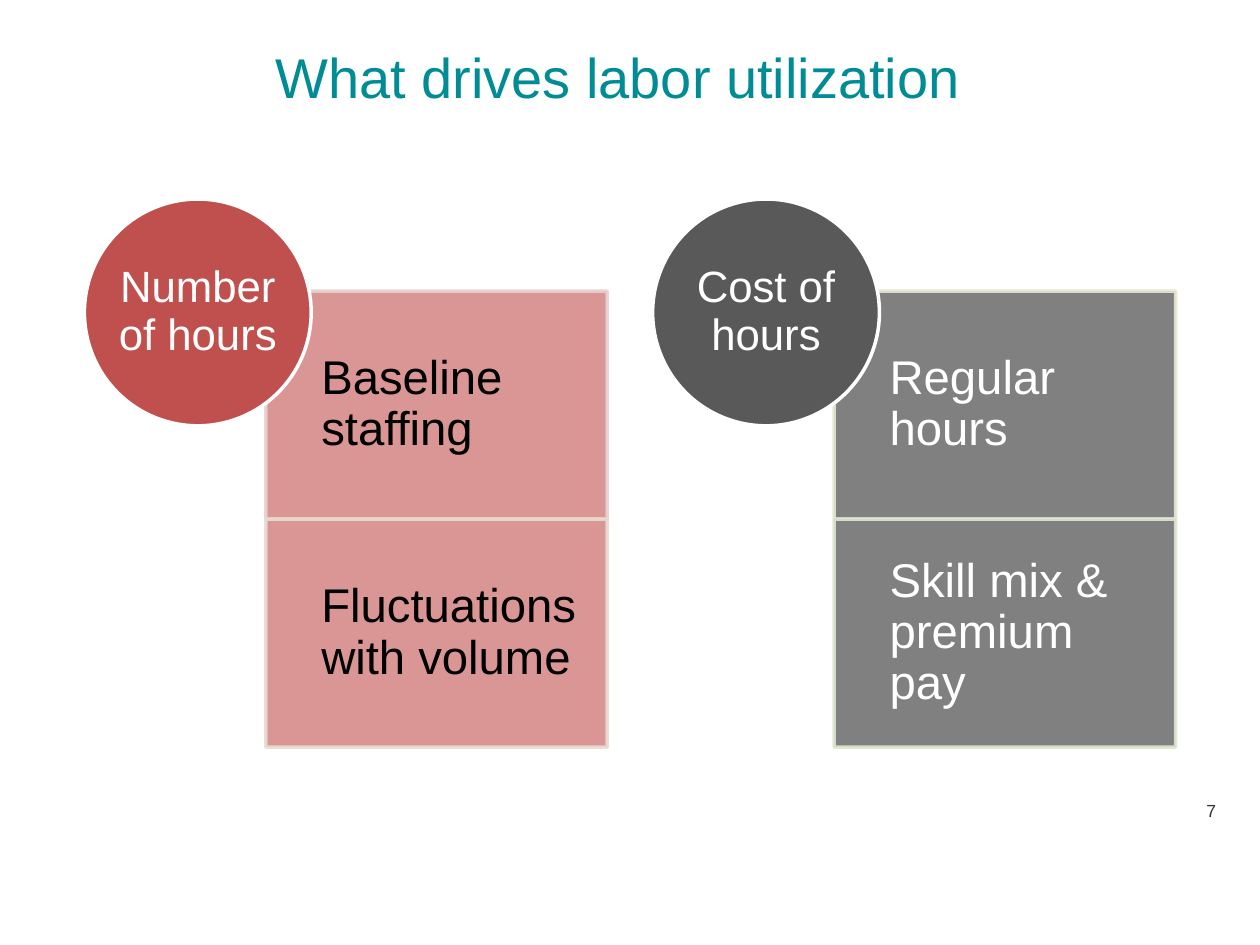
from dataclasses import dataclass

from lxml.etree import SubElement
from pptx import Presentation
from pptx.dml.color import RGBColor
from pptx.enum.shapes import MSO_SHAPE as SHAPE
from pptx.enum.text import MSO_ANCHOR as ANCHOR, PP_ALIGN as ALIGN
from pptx.oxml.ns import qn
from pptx.util import Inches, Pt


@dataclass(frozen=True)
class Theme:
    font: str = "Arial"
    title: str = "008C95"
    number: str = "333333"
    white: str = "FFFFFF"
    black: str = "000000"
    red: str = "C0504D"
    pink: str = "D99694"
    dark: str = "595959"
    gray: str = "808080"
    title_size: int = 32
    driver_size: int = 27
    circle_size: int = 25
    number_size: int = 10


T = Theme()


def write(sp, text, size, color, align, insets=None, spacing=None):
    tf = sp.text_frame
    tf.word_wrap = True
    tf.vertical_anchor = ANCHOR.MIDDLE
    if insets:
        for side, inset in zip(("left", "top", "right", "bottom"), insets):
            setattr(tf, f"margin_{side}", Inches(inset))
    p = tf.paragraphs[0]
    p.alignment = align
    if spacing:
        p.line_spacing = spacing
    r = p.add_run()
    r.text = text
    r.font.color.rgb = RGBColor.from_string(color)
    for name, value in {"name": T.font, "size": Pt(size)}.items():
        setattr(r.font, name, value)


def add_block(s, kind, box, fill, line, text, size, color, align, insets):
    sp = s.shapes.add_shape(kind, *map(Inches, box))
    sp.shadow.inherit = False
    sp.fill.solid()
    sp.fill.fore_color.rgb = RGBColor.from_string(fill)
    sp.line.color.rgb = RGBColor.from_string(line)
    sp.line.width = Pt(2)
    write(sp, text, size, color, align, insets, 0.9)
    return sp


prs = Presentation()
prs.slide_width, prs.slide_height = Inches(10), Inches(7.5)
s = prs.slides.add_slide(prs.slide_layouts[5])

title = s.shapes.title
for name, value in {"left": 0.83, "top": 0.26, "width": 8.15, "height": 0.69}.items():
    setattr(title, name, Inches(value))
write(title, "What drives labor utilization", T.title_size, T.title, ALIGN.CENTER)

groups = [
    ("Number of hours", T.red, T.pink, T.black,
     [("Baseline staffing", "E8D0D0"), ("Fluctuations with volume", "E8DCD0")]),
    ("Cost of hours", T.dark, T.gray, T.white,
     [("Regular hours", "E7E6D1"), ("Skill mix & premium pay", "DEE7D1")]),
]
left, group_step = 0.67, 4.51
circle_top, circle_size = 1.58, 1.8
box_offset, box_top, box_width, box_height = 1.44, 2.31, 2.71, 1.81

for col, (heading, circle_fill, box_fill, text_color, drivers) in enumerate(groups):
    x = left + col * group_step
    for row, (driver, border) in enumerate(drivers):
        box = (x + box_offset, box_top + row * box_height, box_width, box_height)
        sp = add_block(s, SHAPE.RECTANGLE, box, box_fill, border, driver, T.driver_size,
                       text_color, ALIGN.LEFT, (0.44, 0.21, 0.21, 0.21))
        border_color = sp.line._ln.find(".//" + qn("a:srgbClr"))
        SubElement(border_color, qn("a:alpha"), val="90000")
    add_block(s, SHAPE.OVAL, (x, circle_top, circle_size, circle_size), circle_fill, T.white,
              heading, T.circle_size, T.white, ALIGN.CENTER, (0, 0, 0, 0))

number = s.shapes.add_textbox(Inches(8.58), Inches(6.32), Inches(1.17), Inches(0.23))
write(number, "7", T.number_size, T.number, ALIGN.RIGHT)

prs.save("out.pptx")
